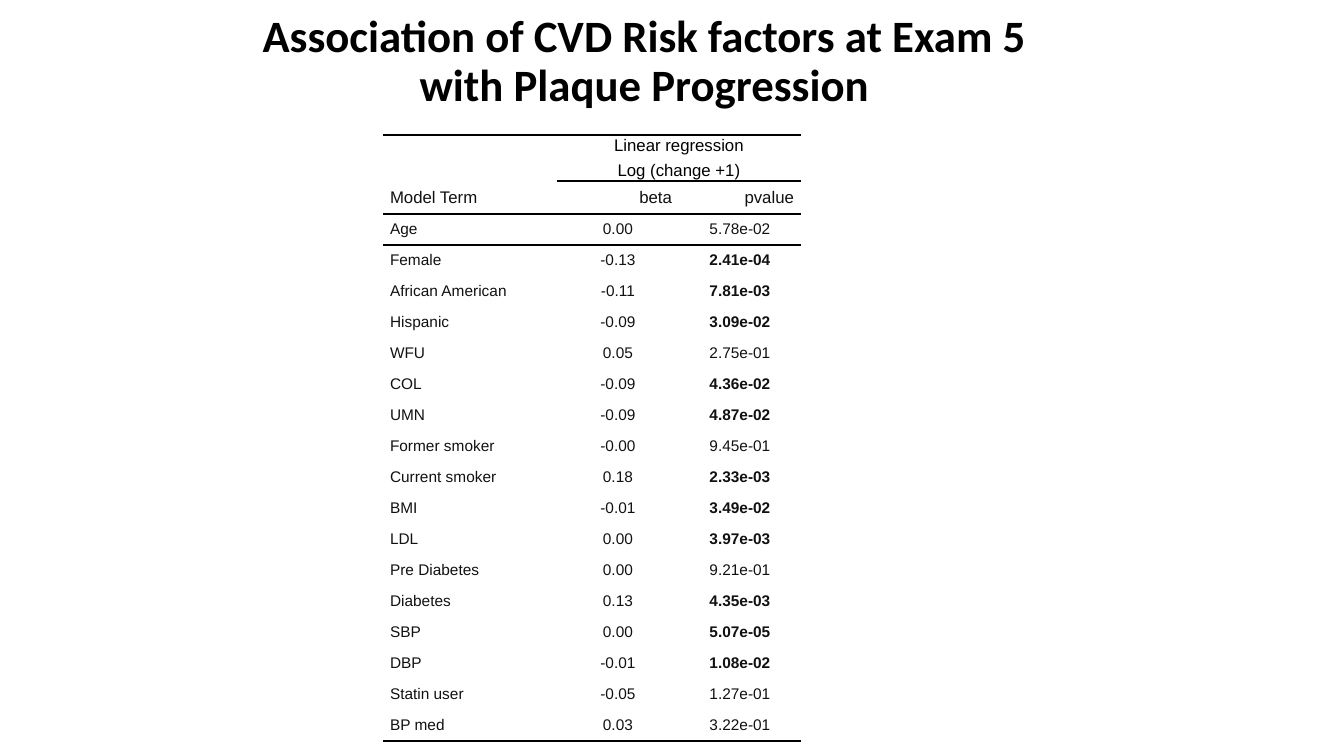
from typing import NamedTuple

from lxml import etree
from pptx import Presentation
from pptx.dml.color import RGBColor
from pptx.enum.text import MSO_ANCHOR, PP_ALIGN
from pptx.oxml.ns import qn
from pptx.slide import Slide
from pptx.table import Table, _Cell
from pptx.util import Emu, Pt

LEFT, CENTER, RIGHT = PP_ALIGN.LEFT, PP_ALIGN.CENTER, PP_ALIGN.RIGHT
TOP, MIDDLE = MSO_ANCHOR.TOP, MSO_ANCHOR.MIDDLE

EMU_PER_PX = 9071
BLACK = RGBColor(0x00, 0x00, 0x00)
NEAR_BLACK = RGBColor(0x11, 0x11, 0x11)
NO_TABLE_STYLE = "{2D5ABB26-0587-4C30-8999-92F81FD0307C}"

COLUMN_WIDTHS = (149, 25, 122, 122)
TERM_COLUMN, SPACER_COLUMN, BETA_COLUMN, PVALUE_COLUMN = range(4)
HEADER_HEIGHTS = (43, 33)
FACTOR_HEIGHT = 31
CELL_INDENT = 7
SIGNIFICANCE_LEVEL = 0.05


class RiskFactor(NamedTuple):
    term: str
    beta: str
    pvalue: str


class CellStyle(NamedTuple):
    alignment: PP_ALIGN
    size: int
    color: RGBColor = NEAR_BLACK
    bold: bool = False


RISK_FACTORS = (
    RiskFactor("Age", "0.00", "5.78e-02"),
    RiskFactor("Female", "-0.13", "2.41e-04"),
    RiskFactor("African American", "-0.11", "7.81e-03"),
    RiskFactor("Hispanic", "-0.09", "3.09e-02"),
    RiskFactor("WFU", "0.05", "2.75e-01"),
    RiskFactor("COL", "-0.09", "4.36e-02"),
    RiskFactor("UMN", "-0.09", "4.87e-02"),
    RiskFactor("Former smoker", "-0.00", "9.45e-01"),
    RiskFactor("Current smoker", "0.18", "2.33e-03"),
    RiskFactor("BMI", "-0.01", "3.49e-02"),
    RiskFactor("LDL", "0.00", "3.97e-03"),
    RiskFactor("Pre Diabetes", "0.00", "9.21e-01"),
    RiskFactor("Diabetes", "0.13", "4.35e-03"),
    RiskFactor("SBP", "0.00", "5.07e-05"),
    RiskFactor("DBP", "-0.01", "1.08e-02"),
    RiskFactor("Statin user", "-0.05", "1.27e-01"),
    RiskFactor("BP med", "0.03", "3.22e-01"),
)


def px(length: int) -> Emu:
    return Emu(length * EMU_PER_PX)


def add_title(slide: Slide) -> None:
    title = slide.shapes.add_textbox(px(216), px(9), px(857), px(126))
    text_frame = title.text_frame
    text_frame.word_wrap = True
    text_frame.vertical_anchor = TOP
    text_frame.text = "Association of CVD Risk factors at Exam 5 with Plaque Progression"
    paragraph = text_frame.paragraphs[0]
    paragraph.alignment = CENTER
    paragraph.line_spacing = 0.9
    font = paragraph.runs[0].font
    font.name, font.size, font.bold = "Calibri", Pt(32), True
    font.color.rgb = BLACK


def write_cell(cell: _Cell, text: str, style: CellStyle) -> None:
    cell.text_frame.text = text
    paragraphs = cell.text_frame.paragraphs
    for paragraph in paragraphs:
        paragraph.alignment = style.alignment
        properties = paragraph._p.get_or_add_pPr()
        for margin in ("marL", "marR"):
            properties.set(margin, str(px(CELL_INDENT)))
        for run in paragraph.runs:
            run.font.name = "Arial"
            run.font.size = Pt(style.size)
            run.font.bold = style.bold
            run.font.color.rgb = style.color
    for paragraph in paragraphs[:-1]:
        paragraph.space_after = Pt(4)


def add_border(cell: _Cell, edge: str, width: int) -> None:
    """Draw the lnT (top) or lnB (bottom) edge; add lnB before lnT."""
    line = etree.Element(qn(f"a:{edge}"), w=str(Pt(width)))
    fill = etree.SubElement(line, qn("a:solidFill"))
    etree.SubElement(fill, qn("a:srgbClr"), val=str(BLACK))
    cell._tc.get_or_add_tcPr().insert(0, line)


def add_rules(table: Table) -> None:
    last_row = len(table.rows) - 1
    for column in range(len(COLUMN_WIDTHS)):
        add_border(table.cell(1, column), "lnB", 2)
        add_border(table.cell(last_row, column), "lnB", 2)
        if column >= BETA_COLUMN:
            add_border(table.cell(0, column), "lnB", 1)
            add_border(table.cell(1, column), "lnT", 1)
        add_border(table.cell(0, column), "lnT", 2)
        add_border(table.cell(2, column), "lnT", 2)


def add_regression_table(slide: Slide) -> None:
    heights = HEADER_HEIGHTS + (FACTOR_HEIGHT,) * len(RISK_FACTORS)
    frame = slide.shapes.add_table(
        len(heights), len(COLUMN_WIDTHS),
        px(383), px(135), px(sum(COLUMN_WIDTHS)), px(sum(heights)),
    )
    table = frame.table
    table.first_row = table.horz_banding = False
    table._tbl.tblPr.find(qn("a:tableStyleId")).text = NO_TABLE_STYLE
    for column, width in zip(table.columns, COLUMN_WIDTHS):
        column.width = px(width)
    for row, height in zip(table.rows, heights):
        row.height = px(height)
    for cell in table.iter_cells():
        cell.margin_left = cell.margin_right = 0
        cell.margin_top = cell.margin_bottom = 0
        cell.vertical_anchor = MIDDLE
        cell.fill.background()

    table.cell(0, BETA_COLUMN).merge(table.cell(0, PVALUE_COLUMN))
    write_cell(table.cell(0, BETA_COLUMN), "Linear regression\nLog (change +1)",
               CellStyle(CENTER, 12, BLACK))
    write_cell(table.cell(1, TERM_COLUMN), "Model Term", CellStyle(LEFT, 12))
    write_cell(table.cell(1, BETA_COLUMN), "beta", CellStyle(RIGHT, 12))
    write_cell(table.cell(1, PVALUE_COLUMN), "pvalue", CellStyle(RIGHT, 12))

    for row, factor in enumerate(RISK_FACTORS, start=len(HEADER_HEIGHTS)):
        significant = float(factor.pvalue) < SIGNIFICANCE_LEVEL
        write_cell(table.cell(row, TERM_COLUMN), factor.term, CellStyle(LEFT, 11))
        write_cell(table.cell(row, BETA_COLUMN), factor.beta, CellStyle(CENTER, 11))
        write_cell(table.cell(row, PVALUE_COLUMN), factor.pvalue,
                   CellStyle(CENTER, 11, bold=significant))
    add_rules(table)


def main() -> None:
    presentation = Presentation()
    presentation.slide_width = px(1344)
    presentation.slide_height = px(756)
    slide = presentation.slides.add_slide(presentation.slide_layouts[6])
    add_title(slide)
    add_regression_table(slide)
    presentation.save("out.pptx")


if __name__ == "__main__":
    main()
